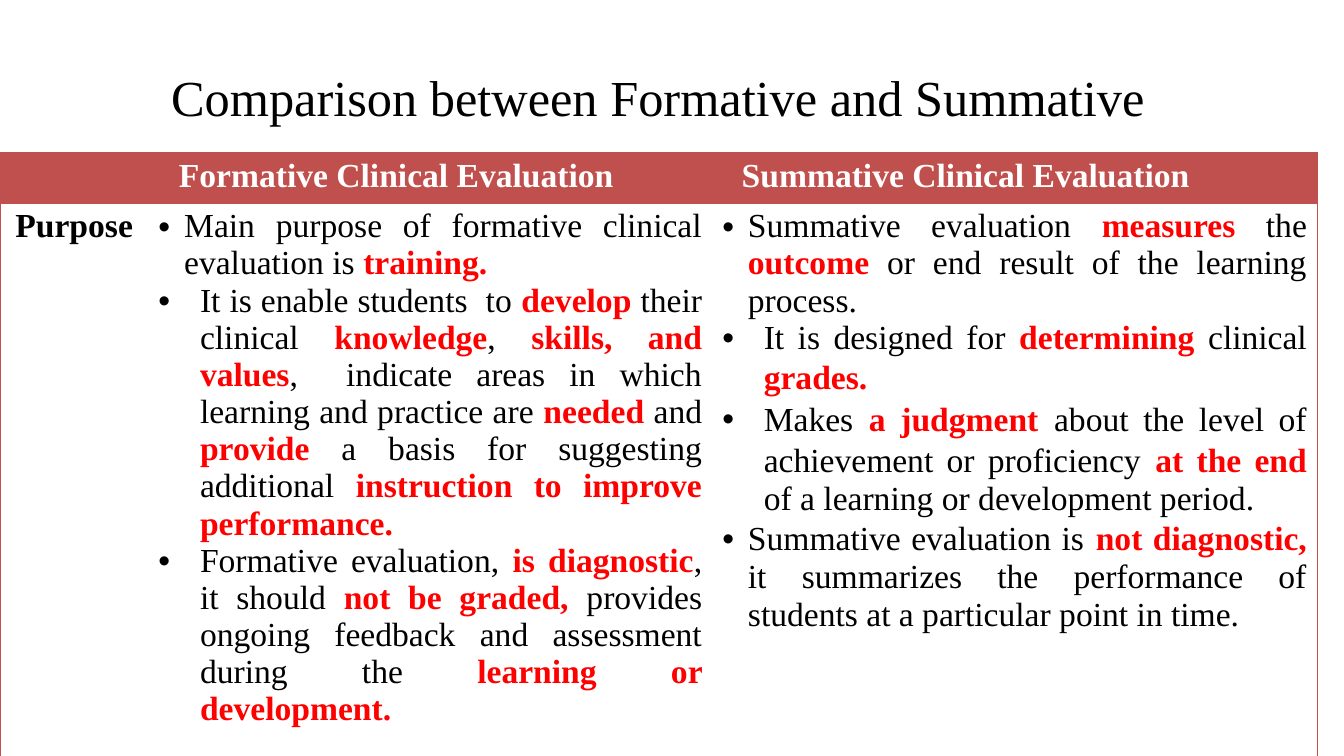
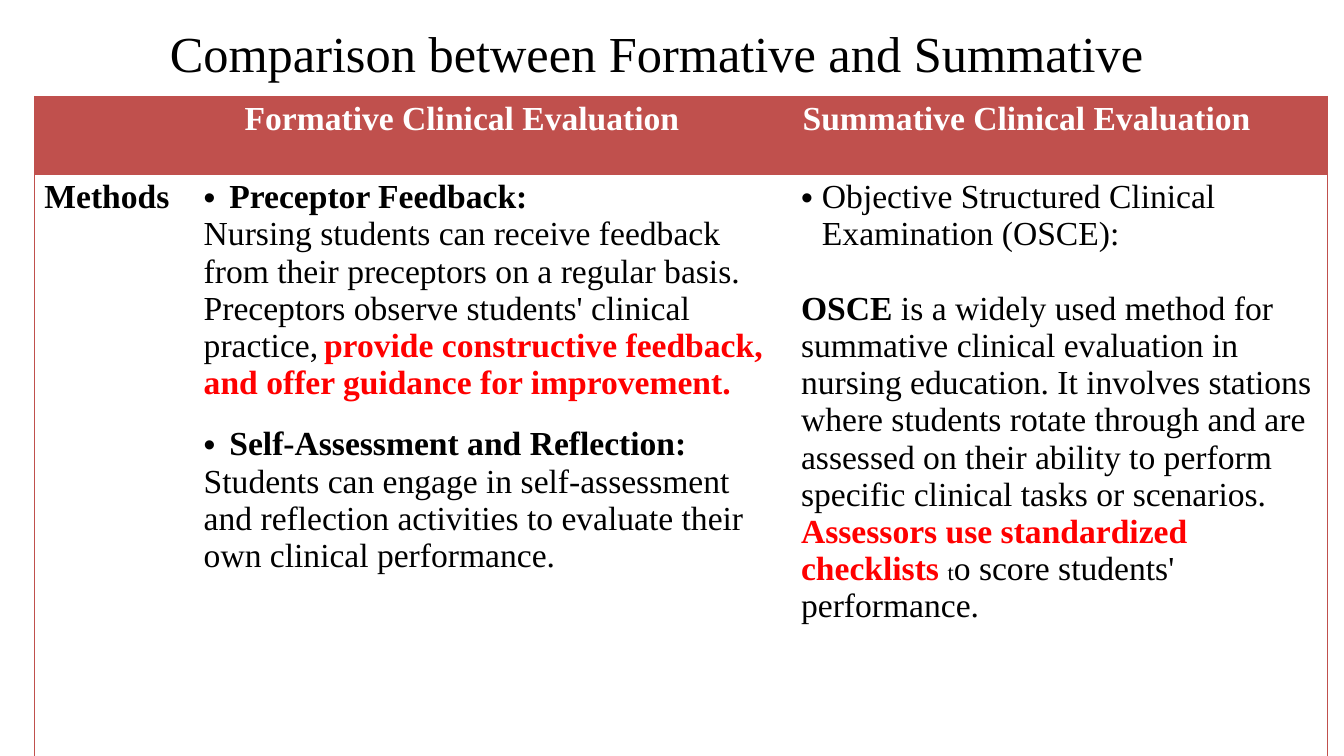
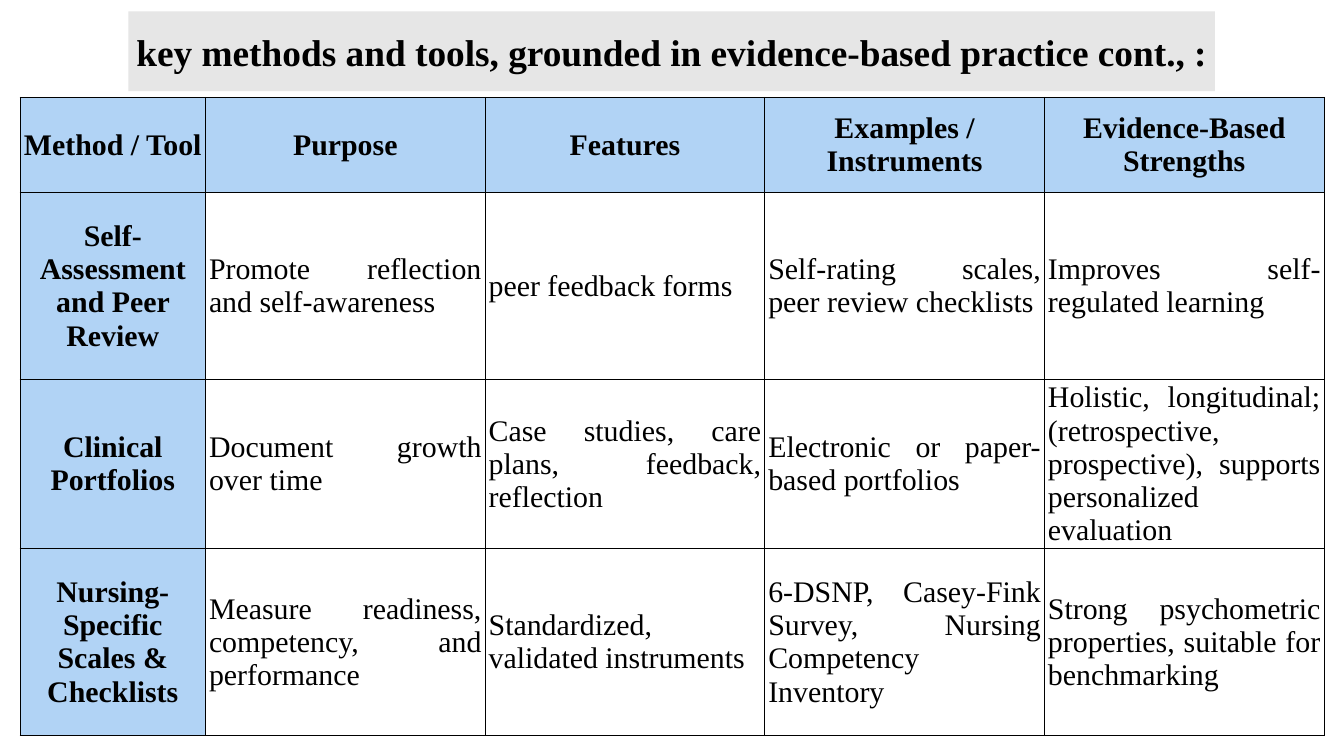
"""Build three slides comparing clinical evaluation types, methods and tools."""
from dataclasses import dataclass

from lxml.etree import SubElement
from pptx import Presentation
from pptx.dml.color import RGBColor as Rgb
from pptx.enum.shapes import MSO_SHAPE as Preset
from pptx.enum.text import MSO_ANCHOR as Anchor, PP_ALIGN as Align
from pptx.oxml.ns import qn
from pptx.util import Cm, Pt


@dataclass(frozen=True)
class Theme:
    font: str = "Times New Roman"
    bullet_font: str = "Arial"
    ink: str = "000000"
    white: str = "FFFFFF"
    accent: str = "C0504D"
    key: str = "FF0000"
    header_blue: str = "B1D3F5"
    title_grey: str = "E6E6E6"
    title: int = 54
    band_title: int = 40
    body: int = 36
    grid: int = 32
    large: int = 40
    small: int = 24


THEME = Theme()
NO_GRID_STYLE = "{2D5ABB26-0587-4C30-8999-92F81FD0307C}"
COMPARISON_TITLE = "Comparison between Formative and Summative"
COMPARISON_HEADERS = ["Formative Clinical Evaluation", "Summative Clinical Evaluation"]

STYLES = {
    "body": dict(size=THEME.body, color=THEME.ink, bold=False),
    "strong": dict(size=THEME.body, color=THEME.ink, bold=True),
    "key": dict(size=THEME.body, color=THEME.key, bold=True),
    "header": dict(size=THEME.body, color=THEME.white, bold=True),
    "large": dict(size=THEME.large, color=THEME.ink, bold=False),
    "small": dict(size=THEME.small, color=THEME.ink, bold=False),
    "title": dict(size=THEME.title, color=THEME.ink, bold=False),
    "band title": dict(size=THEME.band_title, color=THEME.ink, bold=True),
    "grid": dict(size=THEME.grid, color=THEME.ink, bold=False),
    "grid header": dict(size=THEME.grid, color=THEME.ink, bold=True),
}
WIDE_SPACE = (" ", "large")
SMALL_SPACE = (" ", "small")

LAYOUTS = {
    "plain": dict(alignment=Align.LEFT),
    "centred": dict(alignment=Align.CENTER),
    "justified": dict(alignment=Align.JUSTIFY),
    "bullet": dict(alignment=Align.JUSTIFY),
    "deep bullet": dict(alignment=Align.JUSTIFY),
    "left bullet": dict(alignment=Align.LEFT),
    "spaced bullet": dict(alignment=Align.LEFT, space_before=Pt(26)),
    "close bullet": dict(alignment=Align.LEFT),
    "spaced plain": dict(alignment=Align.LEFT, space_before=Pt(40)),
}
HANGING = {"bullet": 0.97, "deep bullet": 1.57, "left bullet": 0.97,
           "spaced bullet": 0.97, "close bullet": 0.79}

FORMATIVE_PURPOSE = [
    ("bullet", ["Main purpose of formative clinical evaluation is ", ("training.", "key")]),
    ("deep bullet", [
        "It is enable students  to ", ("develop", "key"), " their clinical ",
        ("knowledge", "key"), ", ", ("skills, and values", "key"),
        ",  indicate areas in which learning and practice are ", ("needed", "key"),
        " and ", ("provide", "key"), " a basis for suggesting additional ",
        ("instruction to improve performance.", "key")]),
    ("deep bullet", [
        "Formative evaluation, ", ("is diagnostic", "key"), ", it should ",
        ("not be graded, ", "key"),
        "provides ongoing feedback and assessment during the ",
        ("learning or development.", "key")]),
]
SUMMATIVE_PURPOSE = [
    ("bullet", ["Summative evaluation ", ("measures", "key"), " the ", ("outcome", "key"),
                " or end result of the learning process."]),
    ("deep bullet", ["It is designed for ", ("determining ", "key"), "clinical ",
                     ("grades.", "key"), WIDE_SPACE]),
    ("deep bullet", [
        "Makes", WIDE_SPACE, ("a judgment", "key"), WIDE_SPACE,
        "about the level of achievement or proficiency", WIDE_SPACE,
        ("at the end", "key"), WIDE_SPACE, "of a learning or development period."]),
    ("bullet", [
        "Summative evaluation is", WIDE_SPACE, ("not diagnostic,", "key"), WIDE_SPACE,
        "it summarizes the performance of students at a particular point in time."]),
]
FORMATIVE_METHODS = [
    ("left bullet", [("Preceptor Feedback:", "strong")]),
    ("plain", [
        "Nursing students can receive feedback from their preceptors on a regular basis. "
        "Preceptors observe students' clinical practice,", SMALL_SPACE,
        ("provide constructive feedback, and offer guidance for improvement.", "key")]),
    ("spaced bullet", [("Self-Assessment and Reflection:", "strong")]),
    ("plain", ["Students can engage in self-assessment and reflection activities "
               "to evaluate their own clinical performance."]),
]
SUMMATIVE_METHODS = [
    ("close bullet", ["Objective Structured Clinical Examination (OSCE):"]),
    ("spaced plain", [
        ("OSCE ", "strong"),
        "is a widely used method for summative clinical evaluation in nursing education. "
        "It involves stations where students rotate through and are assessed on their "
        "ability to perform specific clinical tasks or scenarios.", SMALL_SPACE,
        ("Assessors use standardized checklists ", "key"), ("t", "small"),
        "o score students' performance."]),
]

COMPARISONS = [
    dict(title_box=(2.97, 2.29, 43.82, 2.72), origin=(0, 5.77),
         columns=[5.61, 21.31, 22.86], rows=[1.91, 21.72], header_insets=[2.95, 4.08],
         label=("centred", "Purpose"), bodies=[FORMATIVE_PURPOSE, SUMMATIVE_PURPOSE]),
    dict(title_box=(2.92, -0.79, 43.82, 5.51), origin=(1.3, 3.63),
         columns=[6.02, 22.58, 20.27], rows=[2.95, 22.15], header_insets=[2.67, 2.84],
         label=("plain", "Methods"), bodies=[FORMATIVE_METHODS, SUMMATIVE_METHODS]),
]

TOOLS_TITLE = "key methods and tools, grounded in evidence-based practice cont., :"
TOOLS_TITLE_BOX = (4.85, 0.43, 41.07, 3.02)
TOOLS_ORIGIN = (0.76, 3.68)
TOOLS_COLUMNS = [7.01] + [10.57] * 4
TOOLS_ROWS = [3.61, 7.06, 6.4, 7.06]
TOOLS = [
    ["Method / Tool", "Purpose", "Features", "Examples / Instruments",
     "Evidence-Based Strengths"],
    ["Self-Assessment and Peer Review", "Promote reflection and self-awareness",
     "peer feedback forms", "Self-rating scales, peer review checklists",
     "Improves self-regulated learning"],
    ["Clinical Portfolios", "Document growth over time",
     "Case studies, care plans, feedback, reflection",
     "Electronic or paper-based portfolios",
     "Holistic, longitudinal; (retrospective, prospective), supports personalized evaluation"],
    ["Nursing-Specific Scales & Checklists", "Measure readiness, competency, and performance",
     "Standardized, validated instruments",
     "6-DSNP, Casey-Fink Survey, Nursing Competency Inventory",
     "Strong psychometric properties, suitable for benchmarking"],
]


def set_attributes(target, values):
    for name, value in values.items():
        setattr(target, name, value)


def add_bullet(paragraph, hanging):
    properties = paragraph._p.get_or_add_pPr()
    properties.set("marL", str(Cm(hanging)))
    properties.set("indent", str(-Cm(hanging)))
    SubElement(properties, qn("a:buFont"), typeface=THEME.bullet_font)
    SubElement(properties, qn("a:buChar"), char="•")


def write(frame, paragraphs):
    for index, (layout, runs) in enumerate(paragraphs):
        paragraph = frame.add_paragraph() if index else frame.paragraphs[0]
        set_attributes(paragraph, LAYOUTS[layout])
        if layout in HANGING:
            add_bullet(paragraph, HANGING[layout])
        for item in runs:
            text, style = (item, "body") if isinstance(item, str) else item
            look = STYLES[style]
            run = paragraph.add_run()
            run.text = text
            set_attributes(run.font, dict(name=THEME.font, size=Pt(look["size"]),
                                          bold=look["bold"]))
            run.font.color.rgb = Rgb.from_string(look["color"])


def add_title(slide, box, text, style, fill=None):
    shape = slide.shapes.add_shape(Preset.RECTANGLE, *map(Cm, box))
    shape.shadow.inherit = False
    shape.line.fill.background()
    paint(shape.fill, fill)
    set_attributes(shape.text_frame, dict(word_wrap=fill is None,
                                          vertical_anchor=Anchor.MIDDLE))
    write(shape.text_frame, [("centred", [(text, style)])])


def paint(fill, color):
    if color:
        fill.solid()
        fill.fore_color.rgb = Rgb.from_string(color)
    else:
        fill.background()


def add_table(slide, origin, columns, rows):
    size = (sum(columns), sum(rows))
    frame = slide.shapes.add_table(len(rows), len(columns), *map(Cm, (*origin, *size)))
    table = frame.table
    set_attributes(table, dict(first_row=False, horz_banding=False))
    table._tbl.tblPr.find(qn("a:tableStyleId")).text = NO_GRID_STYLE
    for column, width in zip(table.columns, columns):
        column.width = Cm(width)
    for row, height in zip(table.rows, rows):
        row.height = Cm(height)
    return table


def fill_cell(cell, paragraphs, fill, sides, border, insets, anchor):
    names = ("margin_left", "margin_top", "margin_right", "margin_bottom")
    set_attributes(cell, dict(zip(names, map(Cm, insets)), vertical_anchor=anchor))
    color, width = border
    properties = cell._tc.get_or_add_tcPr()
    for side in sides:
        line = SubElement(properties, qn(f"a:ln{side}"), w=str(Pt(width)))
        solid = SubElement(line, qn("a:solidFill"))
        SubElement(solid, qn("a:srgbClr"), val=color)
    paint(cell.fill, fill)
    write(cell.text_frame, paragraphs)


def add_comparison(slide, comparison):
    add_title(slide, comparison["title_box"], COMPARISON_TITLE, "title")
    layout, label = comparison["label"]
    headers = [[("centred", [(text, "header")])] for text in COMPARISON_HEADERS]
    content = [[[], *headers],
               [[(layout, [(label, "strong")])], *comparison["bodies"]]]
    right_insets = [[0.38, *comparison["header_insets"]], [0.38] * 3]
    table = add_table(slide, comparison["origin"], comparison["columns"], comparison["rows"])
    for row, cells in enumerate(content):
        for column, paragraphs in enumerate(cells):
            sides = [side for side, shown in
                     (("L", column == 0), ("R", column == 2), ("T", True), ("B", row == 1))
                     if shown]
            fill_cell(table.cell(row, column), paragraphs, None if row else THEME.accent,
                      sides, (THEME.accent, 0.5),
                      (0.38, 0.18, right_insets[row][column], 0.18), Anchor.TOP)


def add_tools(slide):
    table = add_table(slide, TOOLS_ORIGIN, TOOLS_COLUMNS, TOOLS_ROWS)
    for row, texts in enumerate(TOOLS):
        for column, text in enumerate(texts):
            heading = row == 0 or column == 0
            layout, style, fill = (("centred", "grid header", THEME.header_blue) if heading
                                   else ("justified", "grid", None))
            fill_cell(table.cell(row, column), [(layout, [(text, style)])], fill, "LRTB",
                      (THEME.ink, 1), (0.13, 0.05, 0.13, 0.05), Anchor.MIDDLE)
    add_title(slide, TOOLS_TITLE_BOX, TOOLS_TITLE, "band title", THEME.title_grey)


def main():
    presentation = Presentation()
    set_attributes(presentation, dict(slide_width=Cm(50.8), slide_height=Cm(28.58)))
    blank = presentation.slide_layouts[6]
    for comparison in COMPARISONS:
        add_comparison(presentation.slides.add_slide(blank), comparison)
    add_tools(presentation.slides.add_slide(blank))
    presentation.save("out.pptx")


if __name__ == "__main__":
    main()
